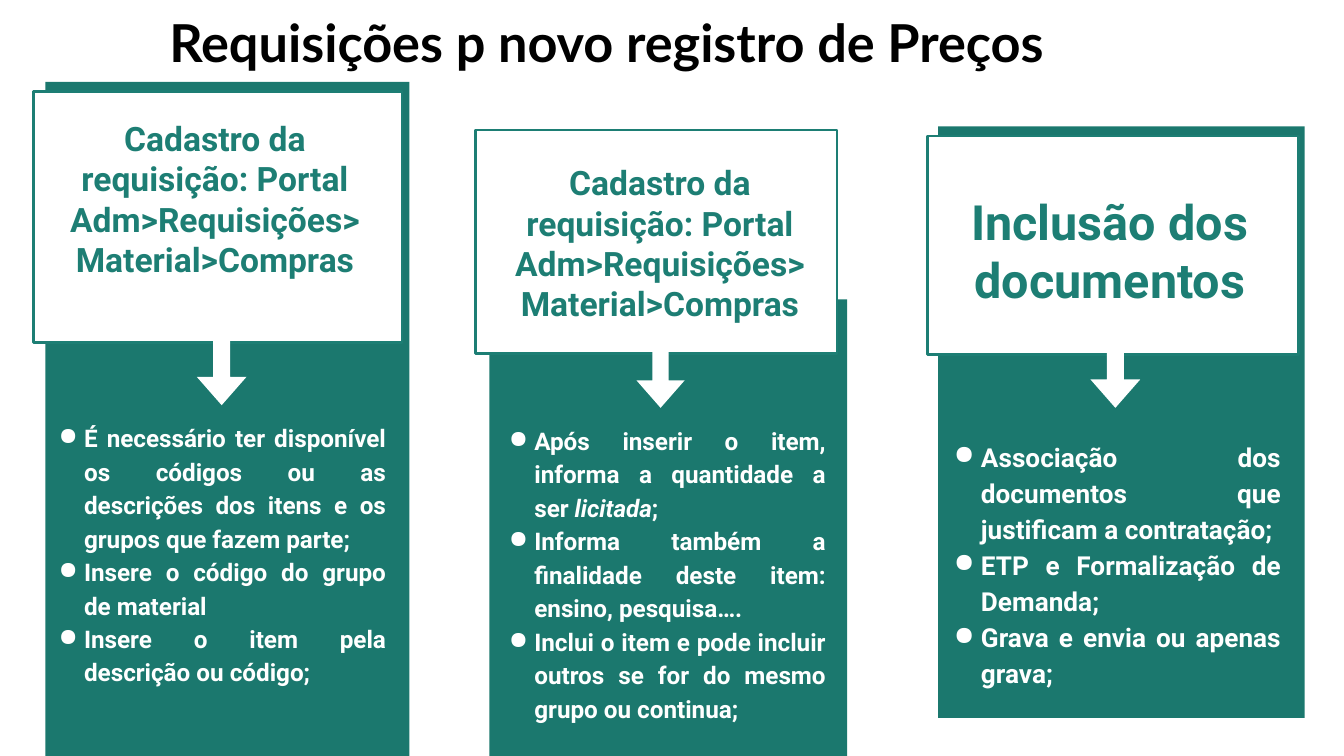
"""Build a slide with three step cards about requests for a new price registry."""
from lxml.etree import SubElement
from pptx import Presentation
from pptx.dml.color import RGBColor
from pptx.enum.shapes import MSO_SHAPE
from pptx.enum.text import MSO_ANCHOR, MSO_AUTO_SIZE, PP_ALIGN
from pptx.oxml.ns import qn
from pptx.util import Cm, Pt

BLACK = RGBColor(0x00, 0x00, 0x00)
WHITE = RGBColor(0xFF, 0xFF, 0xFF)
PANEL_GREEN = RGBColor(0x1B, 0x78, 0x6E)
HEADING_GREEN = RGBColor(0x1D, 0x7E, 0x74)

REGISTER = "Cadastro da requisição: Portal Adm>Requisições>Material>Compras"
CARDS = [
    {
        "panel": (0.86, 1.55, 6.88, 12.88),
        "frame": (0.64, 1.73, 6.96, 4.75),
        "arrow": (3.72, 6.44, 0.94, 1.22),
        "body": (0.58, 7.67, 6.96, 6.43),
        "heading": (0.99, 1.98, 6.15, 2.13),
        "title": REGISTER, "title_size": 18, "body_size": 13, "hanging": 0.48,
        "items": [
            "É necessário ter disponível os códigos ou as descrições dos itens e os grupos que fazem parte;",
            "Insere o código do grupo de material",
            "Insere o item pela descrição ou código;",
        ],
    },
    {
        "panel": (9.25, 5.66, 6.76, 11.38),
        "frame": (8.99, 2.46, 6.83, 4.22),
        "arrow": (12.03, 6.62, 0.91, 1.09),
        "body": (9.09, 7.72, 6.76, 5.41),
        "heading": (9.45, 2.82, 6.05, 1.88),
        "title": REGISTER, "title_size": 18, "body_size": 13, "hanging": 0.48,
        "items": [
            "Após inserir o item, informa a quantidade a ser *licitada*;",
            "Informa também a finalidade deste item: ensino, pesquisa….",
            "Inclui o item e pode incluir outros se for do mesmo grupo ou continua;",
        ],
    },
    {
        "panel": (17.73, 2.39, 6.93, 11.18),
        "frame": (17.53, 2.57, 7.01, 4.14),
        "arrow": (20.61, 6.64, 0.94, 1.07),
        "body": (17.53, 8, 6.93, 5.31),
        "heading": (17.88, 3.38, 6.2, 1.85),
        "title": "Inclusão dos documentos", "title_size": 26, "body_size": 14, "hanging": 0.51,
        "items": [
            "Associação dos documentos que justificam a contratação;",
            "ETP e Formalização de Demanda;",
            "Grava e envia ou apenas grava;",
        ],
    },
]


def prepare_frame(shape):
    frame = shape.text_frame
    frame.word_wrap = True
    frame.auto_size = MSO_AUTO_SIZE.NONE
    frame.vertical_anchor = MSO_ANCHOR.TOP
    frame.margin_left = frame.margin_right = Cm(0.25)
    frame.margin_top = frame.margin_bottom = Cm(0.25)
    return frame


def format_font(paragraph, name, size, color):
    font = paragraph.font
    font.name = name
    font.size = Pt(size)
    font.bold = True
    font.color.rgb = color


presentation = Presentation()
presentation.slide_width = Cm(25.4)
presentation.slide_height = Cm(14.29)
slide = presentation.slides.add_slide(presentation.slide_layouts[5])

title = slide.shapes.title
title.left, title.top, title.width, title.height = Cm(2.95), Cm(-0.23), Cm(19.53), Cm(2.77)
paragraph = prepare_frame(title).paragraphs[0]
paragraph.text = "Requisições p novo registro de Preços"
paragraph.alignment = PP_ALIGN.LEFT
paragraph.line_spacing = 1.15
format_font(paragraph, "Lato", 28, BLACK)

for card in CARDS:
    for part, preset, color in (
        ("panel", MSO_SHAPE.RECTANGLE, PANEL_GREEN),
        ("frame", MSO_SHAPE.RECTANGLE, WHITE),
        ("arrow", MSO_SHAPE.DOWN_ARROW, WHITE),
    ):
        shape = slide.shapes.add_shape(preset, *map(Cm, card[part]))
        shape.shadow.inherit = False
        shape.fill.solid()
        shape.fill.fore_color.rgb = color
        if part == "frame":
            shape.line.color.rgb = HEADING_GREEN
            shape.line.width = Pt(1.5)
        else:
            shape.line.fill.background()
        if part == "arrow":
            shape.adjustments[0] = 0.34
            shape.adjustments[1] = 0.57

    body = prepare_frame(slide.shapes.add_textbox(*map(Cm, card["body"])))
    for index, item in enumerate(card["items"]):
        paragraph = body.paragraphs[0] if index == 0 else body.add_paragraph()
        for position, words in enumerate(item.split("*")):
            run = paragraph.add_run()
            run.text = words
            if position % 2:
                run.font.italic = True
        paragraph.alignment = PP_ALIGN.JUSTIFY
        paragraph.line_spacing = 1.15
        properties = paragraph._p.get_or_add_pPr()
        properties.set("marL", str(Cm(0.76)))
        properties.set("indent", str(-Cm(card["hanging"])))
        bullet_color = SubElement(properties, qn("a:buClr"))
        SubElement(bullet_color, qn("a:srgbClr"), val=str(WHITE))
        SubElement(properties, qn("a:buChar"), char="●")
        format_font(paragraph, "Roboto", card["body_size"], WHITE)

    heading = prepare_frame(slide.shapes.add_textbox(*map(Cm, card["heading"])))
    paragraph = heading.paragraphs[0]
    paragraph.text = card["title"]
    paragraph.alignment = PP_ALIGN.CENTER
    format_font(paragraph, "Roboto", card["title_size"], HEADING_GREEN)

presentation.save("out.pptx")
